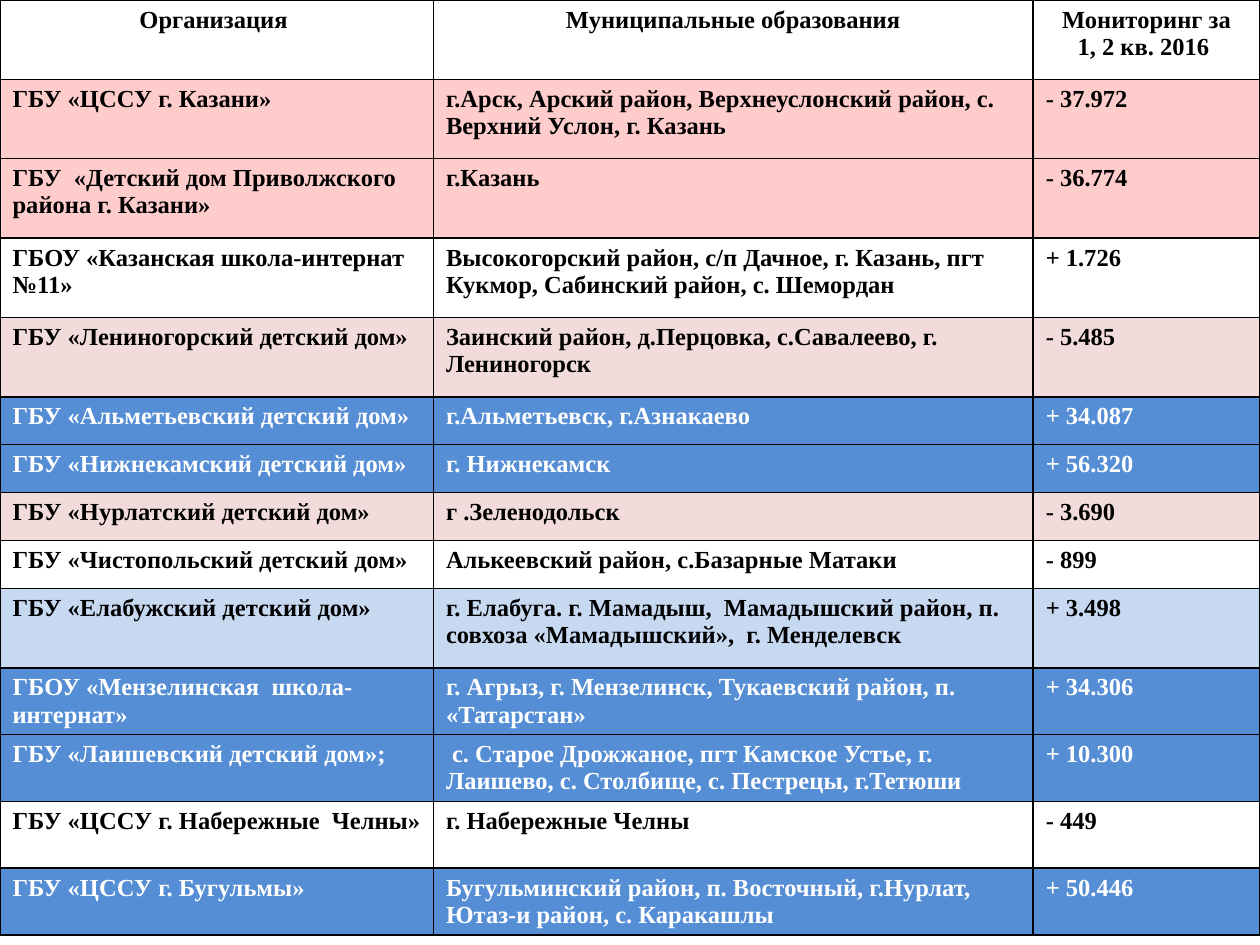
from pptx import Presentation
from pptx.dml.color import RGBColor as RGB
from pptx.enum.text import PP_ALIGN as Align
from pptx.oxml import parse_xml
from pptx.oxml.ns import nsdecls
from pptx.util import Inches, Pt

BLACK = RGB(0x00, 0x00, 0x00)
WHITE = RGB(0xFF, 0xFF, 0xFF)
RED = RGB(0xFF, 0xCC, 0xCC)
PINK = RGB(0xF2, 0xDC, 0xDB)
BLUE = RGB(0x55, 0x8E, 0xD5)
PALE = RGB(0xC6, 0xD9, 0xF1)

FONT = "Times New Roman"
WIDTHS = (3.44, 4.76, 1.8)
TALL, LOW, MID = 0.63, 0.38, 0.53

HEAD = (TALL, None, "Организация ", "Муниципальные образования",
        "Мониторинг за\n1, 2 кв. 2016 ")
UPPER = [
    (TALL, RED, "ГБУ «ЦССУ г. Казани»",
     "г.Арск, Арский район, Верхнеуслонский район, с. Верхний Услон, г. Казань",
     "- 37.972"),
    (TALL, RED, "ГБУ  «Детский дом Приволжского района г. Казани»",
     "г.Казань", "- 36.774"),
    (TALL, WHITE, "ГБОУ «Казанская школа-интернат №11»",
     "Высокогорский район, с/п Дачное, г. Казань, пгт Кукмор, "
     "Сабинский район, с. Шемордан", "+ 1.726"),
    (TALL, PINK, "ГБУ «Лениногорский детский дом»",
     "Заинский район, д.Перцовка, с.Савалеево, г. Лениногорск", "- 5.485"),
    (LOW, BLUE, "ГБУ «Альметьевский детский дом»",
     "г.Альметьевск, г.Азнакаево", "+ 34.087"),
    (LOW, BLUE, "ГБУ «Нижнекамский детский дом»", "г. Нижнекамск", "+ 56.320"),
    (LOW, PINK, "ГБУ «Нурлатский детский дом»", "г .Зеленодольск", "- 3.690"),
    (LOW, None, "ГБУ «Чистопольский детский дом»",
     "Алькеевский район, с.Базарные Матаки", "- 899"),
    (TALL, PALE, "ГБУ «Елабужский детский дом»",
     "г. Елабуга. г. Мамадыш,  Мамадышский район, п. совхоза "
     "«Мамадышский»,  г. Менделевск", "+ 3.498"),
]
LOWER = [
    (MID, BLUE, "ГБОУ «Мензелинская  школа-интернат»",
     "г. Агрыз, г. Мензелинск, Тукаевский район, п. «Татарстан»", "+ 34.306"),
    (MID, BLUE, "ГБУ «Лаишевский детский дом»;",
     " с. Старое Дрожжаное, пгт Камское Устье, г. Лаишево, с. Столбище, "
     "с. Пестрецы, г.Тетюши", "+ 10.300"),
    (MID, None, "ГБУ «ЦССУ г. Набережные  Челны»", "г. Набережные Челны", "- 449"),
    (MID, BLUE, "ГБУ «ЦССУ г. Бугульмы»",
     "Бугульминский район, п. Восточный, г.Нурлат, Ютаз-и район, с. Каракашлы",
     "+ 50.446"),
]


def put_text(frame, text, size=14, color=BLACK, bold=True, align=Align.LEFT):
    """Fill a text frame, one paragraph for each line of text."""
    frame.text = text
    for para in frame.paragraphs:
        para.alignment = align
        for run in para.runs:
            font = run.font
            font.name, font.size, font.bold = FONT, Pt(size), bold
            font.color.rgb = color


def fill_cell(cell, color):
    """Give a cell a solid fill, or none."""
    if color is None:
        cell.fill.background()
    else:
        cell.fill.solid()
        cell.fill.fore_color.rgb = color


def add_edges(cell, color=BLACK, width=1):
    """Draw the four borders of a cell."""
    props = cell._tc.get_or_add_tcPr()
    for spot, side in enumerate("LRTB"):
        props.insert(spot, parse_xml(
            f'<a:ln{side} {nsdecls("a")} w="{Pt(width)}"><a:solidFill>'
            f'<a:srgbClr val="{color}"/></a:solidFill></a:ln{side}>'))


def add_grid(slide, top, rows, head=False):
    """Add a table whose rows hold height, fill and cell texts."""
    high = sum(row[0] for row in rows)
    table = slide.shapes.add_table(
        len(rows), len(WIDTHS), Inches(0), Inches(top),
        Inches(sum(WIDTHS)), Inches(high)).table
    table.first_row = head
    table.horz_banding = False
    for col, width in zip(table.columns, WIDTHS):
        col.width = Inches(width)
    for num, (row, (tall, fill, *texts)) in enumerate(zip(table.rows, rows)):
        row.height = Inches(tall)
        align = Align.CENTER if head and num == 0 else Align.LEFT
        ink = WHITE if fill == BLUE else BLACK
        for cell, text in zip(row.cells, texts):
            put_text(cell.text_frame, text, color=ink, align=align)
            fill_cell(cell, fill)
            add_edges(cell)


def main():
    """Build the slide and save it."""
    deck = Presentation()
    deck.slide_width, deck.slide_height = Inches(10), Inches(7.5)
    slide = deck.slides.add_slide(deck.slide_layouts[6])
    add_grid(slide, 0, [HEAD, *UPPER], head=True)
    add_grid(slide, 5.3, LOWER)
    deck.save("out.pptx")


if __name__ == "__main__":
    main()
